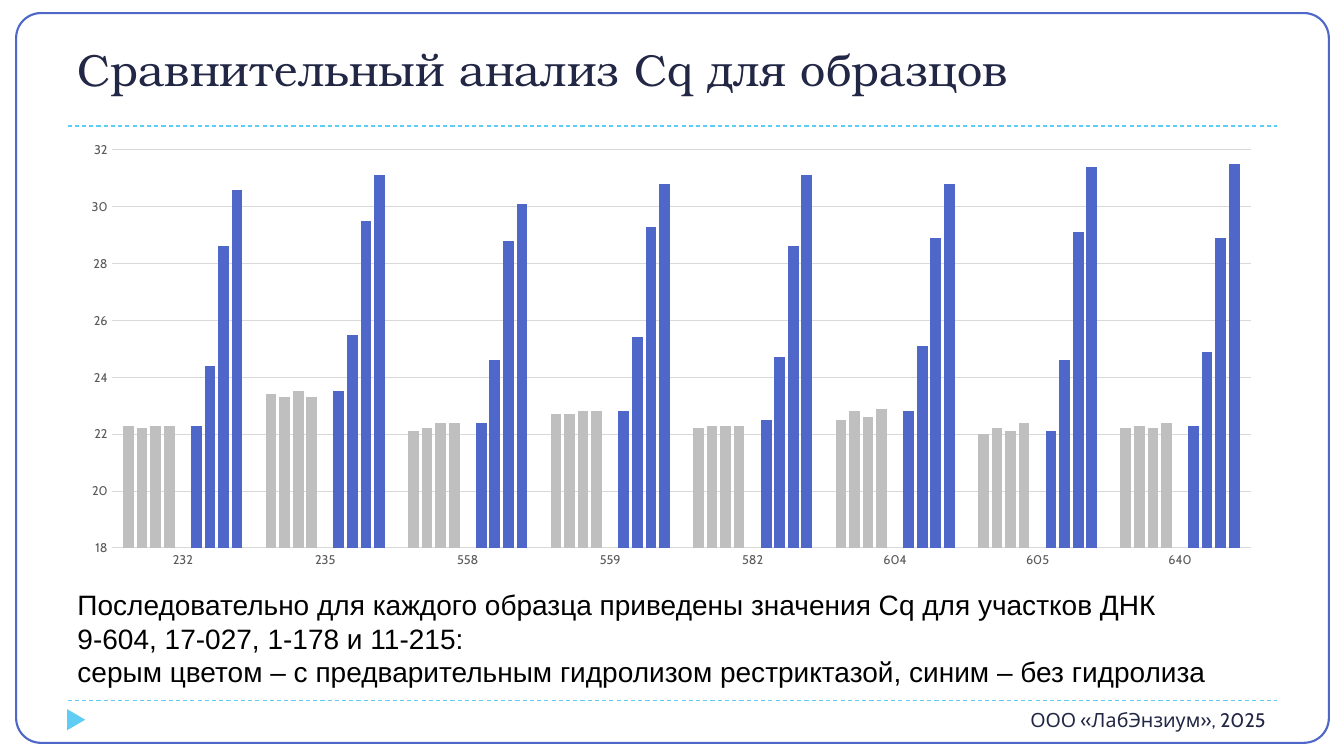
import pptx
import pptx.chart.data
import pptx.dml.color
import pptx.enum.chart
import pptx.enum.dml
import pptx.enum.shapes
import pptx.enum.text
import pptx.oxml
import pptx.util

RGBColor = pptx.dml.color.RGBColor
NAVY = RGBColor(0x21, 0x27, 0x45)
BLUE = RGBColor(0x4E, 0x67, 0xC8)
CYAN = RGBColor(0x5E, 0xCC, 0xF3)
GREEN = RGBColor(0x68, 0xA9, 0x15)
BAR_GRAY = RGBColor(0xBF, 0xBF, 0xBF)
GRID_GRAY = RGBColor(0xD9, 0xD9, 0xD9)
LABEL_GRAY = RGBColor(0x59, 0x59, 0x59)
BLACK = RGBColor(0, 0, 0)

EMU_PER_PX = 9144  # 100 px to the inch
LEFT, RIGHT = 67, 1267

SAMPLES = ["232", "235", "558", "559", "582", "604", "605", "640"]
DIGESTED = [
    [22.3, 23.4, 22.1, 22.7, 22.2, 22.5, 22, 22.2],
    [22.2, 23.3, 22.2, 22.7, 22.3, 22.8, 22.2, 22.3],
    [22.3, 23.5, 22.4, 22.8, 22.3, 22.6, 22.1, 22.2],
    [22.3, 23.3, 22.4, 22.8, 22.3, 22.9, 22.4, 22.4],
]
SPACER = [None] * len(SAMPLES)
UNDIGESTED = [
    [22.3, 23.5, 22.4, 22.8, 22.5, 22.8, 22.1, 22.3],
    [24.4, 25.5, 24.6, 25.4, 24.7, 25.1, 24.6, 24.9],
    [28.6, 29.5, 28.8, 29.3, 28.6, 28.9, 29.1, 28.9],
    [30.6, 31.1, 30.1, 30.8, 31.1, 30.8, 31.4, 31.5],
]
NOTE = (
    "Последовательно для каждого образца приведены значения Cq для участков ДНК\n"
    "9-604, 17-027, 1-178 и 11-215:\n"
    "серым цветом – с предварительным гидролизом рестриктазой, синим – без гидролиза"
)


def px(*lengths):
    return [pptx.util.Emu(length * EMU_PER_PX) for length in lengths]


def set_attributes(target, values):
    for name, value in values.items():
        setattr(target, name, value)


def format_font(font, name, size, color):
    set_attributes(font, {"name": name, "size": pptx.util.Pt(size)})
    font.color.rgb = color


def format_line(line, color, width):
    line.color.rgb = color
    line.width = pptx.util.Pt(width)


def write_text(shape, text, font, size, color,
               align=pptx.enum.text.PP_ALIGN.LEFT,
               anchor=pptx.enum.text.MSO_ANCHOR.TOP):
    frame = shape.text_frame
    set_attributes(frame, {
        "word_wrap": True,
        "auto_size": pptx.enum.text.MSO_AUTO_SIZE.NONE,
        "vertical_anchor": anchor,
    })
    paragraph = frame.paragraphs[0]
    set_attributes(paragraph, {"text": text, "alignment": align})
    for run in paragraph.runs:
        format_font(run.font, font, size, color)


def add_frame(slide):
    shape = slide.shapes.add_shape(
        pptx.enum.shapes.MSO_SHAPE.ROUNDED_RECTANGLE, *px(16, 13, 1302, 724))
    shape.shadow.inherit = False
    shape.adjustments[0] = 0.034
    shape.fill.background()
    format_line(shape.line, BLUE, 1.5)


def add_dashed_rule(slide, y):
    rule = slide.shapes.add_connector(
        pptx.enum.shapes.MSO_CONNECTOR.STRAIGHT, *px(LEFT, y, RIGHT, y))
    format_line(rule.line, CYAN, 0.75)
    rule.line.dash_style = pptx.enum.dml.MSO_LINE.DASH
    properties = rule._element.spPr
    properties.append(properties.makeelement(pptx.oxml.ns.qn("a:effectLst"), {}))


def add_marker(slide):
    shape = slide.shapes.add_shape(
        pptx.enum.shapes.MSO_SHAPE.ISOSCELES_TRIANGLE, *px(65, 705, 21, 18))
    shape.shadow.inherit = False
    shape.rotation = 90
    shape.fill.solid()
    shape.fill.fore_color.rgb = CYAN
    shape.line.fill.background()


def add_title(slide, text):
    title = slide.shapes.title
    title.left, title.top, title.width, title.height = px(LEFT, 17, 1200, 83)
    write_text(title, text, "TeX Gyre Bonum", 32, NAVY,
               anchor=pptx.enum.text.MSO_ANCHOR.BOTTOM)


def add_text(slide, box, *text_format, **layout):
    write_text(slide.shapes.add_textbox(*px(*box)), *text_format, **layout)


def format_axes(chart):
    for axis in (chart.category_axis, chart.value_axis):
        set_attributes(axis, {
            "major_tick_mark": pptx.enum.chart.XL_TICK_MARK.NONE,
            "minor_tick_mark": pptx.enum.chart.XL_TICK_MARK.NONE,
        })
        format_font(axis.tick_labels.font, "Cabin", 9, LABEL_GRAY)
    format_line(chart.category_axis.format.line, GRID_GRAY, 0.75)
    value_axis = chart.value_axis
    set_attributes(value_axis, {
        "minimum_scale": 18,
        "maximum_scale": 32,
        "major_unit": 2,
        "has_major_gridlines": True,
    })
    value_axis.format.line.fill.background()
    format_line(value_axis.major_gridlines.format.line, GRID_GRAY, 0.75)


def add_cq_chart(slide):
    """Add clustered columns, with an empty series parting the two groups."""
    groups = ([(values, BAR_GRAY) for values in DIGESTED]
              + [(SPACER, GREEN)]
              + [(values, BLUE) for values in UNDIGESTED])
    data = pptx.chart.data.CategoryChartData()
    data.categories = SAMPLES
    for number, (values, _) in enumerate(groups, 1):
        data.add_series(f"Series {number}", values)
    chart = slide.shapes.add_chart(
        pptx.enum.chart.XL_CHART_TYPE.COLUMN_CLUSTERED,
        *px(LEFT, 132, 1198, 440), data).chart
    set_attributes(chart, {"has_legend": False, "has_title": False})
    format_font(chart.font, "Cabin", 10, BLACK)
    plot = chart.plots[0]
    set_attributes(plot, {
        "gap_width": 219, "overlap": -27, "vary_by_categories": False})
    for series, (_, color) in zip(plot.series, groups):
        series.format.fill.solid()
        series.format.fill.fore_color.rgb = color
    format_axes(chart)


def main():
    presentation = pptx.Presentation()
    presentation.slide_width, presentation.slide_height = px(1333, 750)
    slide = presentation.slides.add_slide(presentation.slide_layouts[5])
    add_frame(slide)
    for y in (695, 125):
        add_dashed_rule(slide, y)
    add_marker(slide)
    add_title(slide, "Сравнительный анализ Cq для образцов")
    add_text(slide, (LEFT, 578, 1200, 111), NOTE, "Arial", 20, BLACK)
    add_text(slide, (754, 697, 511, 40), "ООО «ЛабЭнзиум», 2025", "Cabin", 14, NAVY,
             align=pptx.enum.text.PP_ALIGN.RIGHT)
    add_cq_chart(slide)
    presentation.save("out.pptx")


if __name__ == "__main__":
    main()
